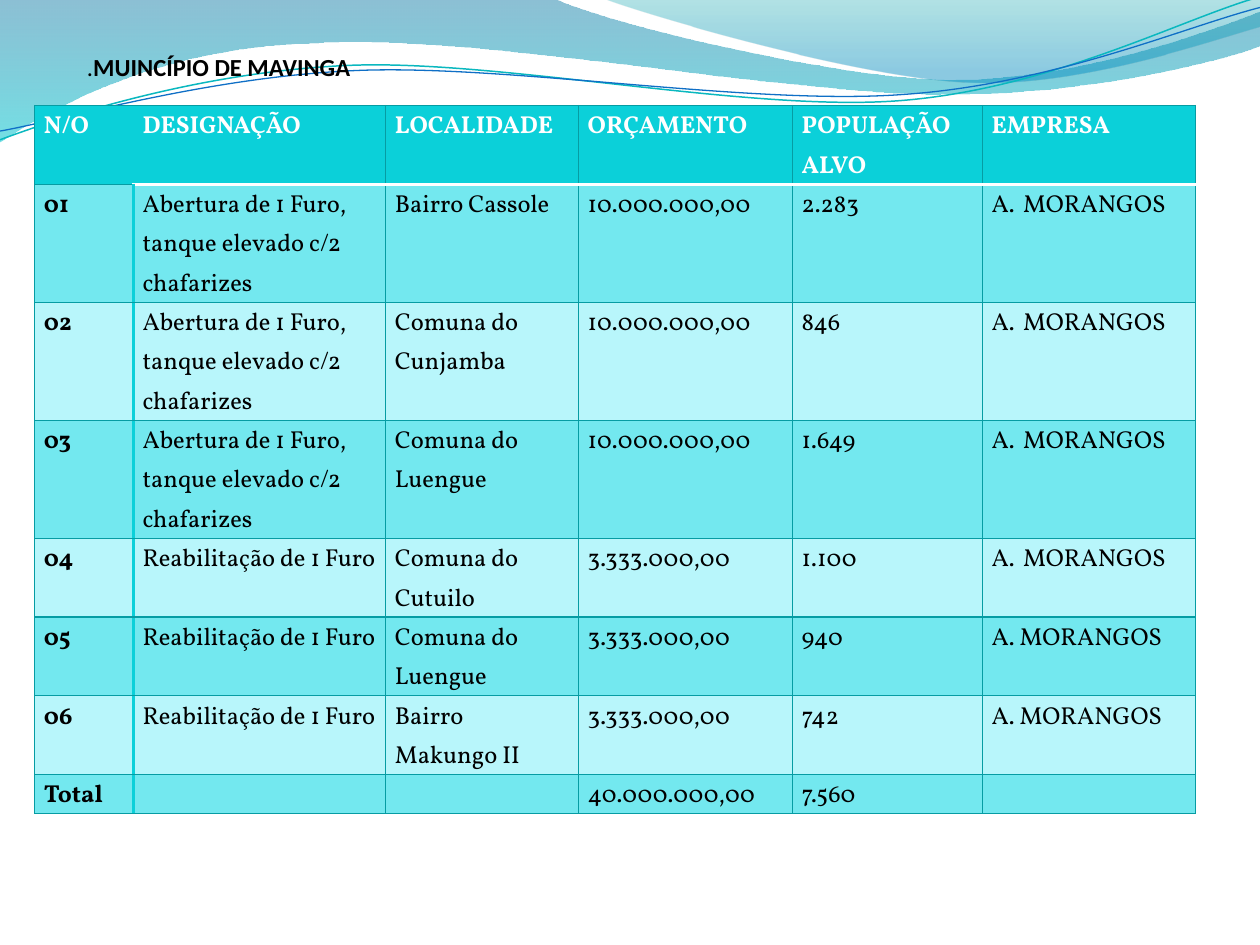
import math
import pptx
import pptx.util
import pptx.dml.color
import pptx.enum.text
import pptx.oxml.ns
import lxml.etree

Pt = pptx.util.Pt
RGB = pptx.dml.color.RGBColor
qn = pptx.oxml.ns.qn
WHITE = RGB(0xFF, 0xFF, 0xFF)
BLACK = RGB(0, 0, 0)
HEAD = RGB(0x0B, 0xD0, 0xD9)
DARK = RGB(0x73, 0xE8, 0xEF)
LIGHT = RGB(0xB8, 0xF6, 0xFB)
EDGE = RGB(0x06, 0x9C, 0xA3)
TEAL = RGB(0x0A, 0xB8, 0xBF)
BLUE = RGB(0x0F, 0x6F, 0xC6)
SKY = RGB(0x00, 0x74, 0xA1)
AQUA = RGB(0x00, 0xC6, 0xCF)
SEA = RGB(0x00, 0xA1, 0xA9)
LAKE = RGB(0x00, 0x8B, 0xBF)


def draw(parts, close):
    dots = [(Pt(part[i]), Pt(part[i + 1])) for part in parts for i in range(0, len(part), 2)]
    pen = slide.shapes.build_freeform(*dots[0], scale=1.0)
    pen.add_line_segments(dots[1:], close=close)
    shape = pen.convert_to_shape()
    shape.shadow.inherit = False
    steps = iter(shape._element.findall(".//" + qn("a:lnTo")))
    for part in parts[1:]:
        step = next(steps)
        if len(part) == 6:
            step.addprevious(curve := lxml.etree.Element(qn("a:cubicBezTo")))
            for old in (step, next(steps), next(steps)):
                curve.append(old[0])
                old.getparent().remove(old)
    return shape


def edge(cell, side, color, width):
    line = lxml.etree.Element(qn("a:ln" + side), w=str(Pt(width)))
    if color is None:
        lxml.etree.SubElement(line, qn("a:noFill"))
    else:
        fill = lxml.etree.SubElement(line, qn("a:solidFill"))
        lxml.etree.SubElement(fill, qn("a:srgbClr"), val=str(color))
    cell._tc.get_or_add_tcPr().insert("LRTB".index(side), line)


deck = pptx.Presentation()
deck.slide_width, deck.slide_height = Pt(720), Pt(540)
slide = deck.slides.add_slide(deck.slide_layouts[5])

waves = [
    ([(0, 0), (316.8, -0.7), (342.7, 12.2, 478.1, 45.4, 545.8, 45.4),
      (614.2, 45.4, 689.8, 18.7, 720, 6.5), (720.7, 25.9),
      (707.8, 31.7, 626.4, 54.7, 537.1, 54),
      (447.8, 54, 275, 20.2, 185, 24.5),
      (92.9, 25.9, 33.1, 59.8, -0.7, 81.4)],
     [(SKY, 0, 45), (AQUA, 100, 55)]),
    ([(344.9, -0.7), (366.5, 7.9, 491, 44.6, 553.7, 46.8),
      (616.3, 49.7, 691.9, 23, 720, 15.1), (720, 0)],
     [(SEA, 0, 30), (LAKE, 80, 45)]),
]
for parts, stops in waves:
    wave = draw(parts, True)
    wave.line.fill.background()
    wave.fill.gradient()
    wave.fill.gradient_angle = 270
    for stop, (color, place, alpha) in zip(wave.fill.gradient_stops, stops):
        stop.color.rgb = color
        stop._gs.set("pos", str(place * 1000))
        lxml.etree.SubElement(stop._gs[0], qn("a:alpha"), val=str(alpha * 1000))

lines = [
    ([(0, 79.9), (34.6, 67, 113.8, 41, 199.4, 37.4),
      (284.4, 33.8, 427, 64.1, 513.4, 57.6),
      (599.8, 51.1, 675.4, 10.8, 718.6, -1.4)], 41.4, TEAL, 0.85),
    ([(0, 74.9), (33.8, 69.1, 118.1, 43.9, 203.8, 40.3),
      (290.2, 36.7, 429.8, 60.5, 516.2, 54),
      (601.9, 48.2, 677.5, 15.1, 720, 4.3)], 42.5, BLUE, 0.75),
]
tilt = -2.7
cos, sin = math.cos(math.radians(tilt)), math.sin(math.radians(tilt))
for parts, mid, color, width in lines:
    flat = []
    for part in parts:
        pairs = [(x - 359.6, y - mid) for x, y in zip(part[::2], part[1::2])]
        flat.append([n for x, y in pairs
                     for n in (359.6 + x * cos + y * sin, mid + y * cos - x * sin)])
    line = draw(flat, False)
    line.rotation = tilt
    line.fill.background()
    line.line.color.rgb = color
    line.line.width = Pt(width)

well = "Abertura de 1 Furo, tanque elevado c/2 chafarizes"
fix = "Reabilitação de 1 Furo"
firm = "MORANGOS"
rows = [
    ("N/O", "DESIGNAÇÃO", "LOCALIDADE", "ORÇAMENTO", "POPULAÇÃO ALVO", "EMPRESA"),
    ("01", well, "Bairro Cassole", "10.000.000,00", "2.283", firm),
    ("02", well, "Comuna do Cunjamba", "10.000.000,00", "846", firm),
    ("03", well, "Comuna do Luengue", "10.000.000,00", "1.649", firm),
    ("04", fix, "Comuna do Cutuilo", "3.333.000,00", "1.100", firm),
    ("05", fix, "Comuna do Luengue", "3.333.000,00", "940", "A. " + firm),
    ("06", fix, "Bairro Makungo II", "3.333.000,00", "742", "A. " + firm),
    ("Total", "", "", "40.000.000,00", "7.560", ""),
]
widths = [56.4, 144.2, 110.2, 122.3, 108.5, 121.7]
heights = [40.3, 61.2, 61.2, 61.2, 40.3, 43.2, 40.3, 21.6]
frame = slide.shapes.add_table(len(rows), len(widths), Pt(19.9), Pt(60.2),
                               Pt(sum(widths)), Pt(sum(heights)))
table = frame.table
table.horz_banding = False
for col, width in zip(table.columns, widths):
    col.width = Pt(width)
for r, row in enumerate(rows):
    table.rows[r].height = Pt(heights[r])
    for c, text in enumerate(row):
        cell = table.cell(r, c)
        cell.margin_left = cell.margin_right = Pt(5.2)
        cell.margin_top = cell.margin_bottom = 0
        cell.fill.solid()
        cell.fill.fore_color.rgb = HEAD if r == 0 else DARK if r % 2 else LIGHT
        thin = (EDGE, 0.75)
        split = (HEAD, 2) if r else (None, 0)
        under = (WHITE, 2) if c else thin
        edge(cell, "L", *(split if c == 1 else thin))
        edge(cell, "R", *(split if c == 0 else thin))
        edge(cell, "T", *(under if r == 1 else thin))
        edge(cell, "B", *(under if r == 0 else thin))
        if not text:
            continue
        cell.text_frame.text = text
        para = cell.text_frame.paragraphs[0]
        para.line_spacing = 1.15
        if text == firm:
            props = para._p.get_or_add_pPr()
            props.set("marL", str(Pt(18)))
            props.set("indent", str(-Pt(18)))
            lxml.etree.SubElement(props, qn("a:buFont"), typeface="+mj-lt")
            lxml.etree.SubElement(props, qn("a:buAutoNum"), type="alphaUcPeriod")
        font = para.runs[0].font
        font.name, font.size = "Vollkorn", Pt(14)
        font.bold = r == 0 or c == 0
        font.color.rgb = BLACK if r else WHITE

title = slide.shapes.title
title.left, title.top, title.width, title.height = Pt(42.5), Pt(26), Pt(538.5), Pt(46)
slide.shapes._spTree.append(title._element)
body = title.text_frame
body.text = "."
body.word_wrap = True
body.auto_size = pptx.enum.text.MSO_AUTO_SIZE.NONE
body.vertical_anchor = pptx.enum.text.MSO_ANCHOR.TOP
para = body.paragraphs[0]
para.alignment = pptx.enum.text.PP_ALIGN.LEFT
para.add_run().text = "MUINCÍPIO DE MAVINGA"
for run, bold in zip(para.runs, (False, True)):
    run.font.name, run.font.size, run.font.bold = "Calibri", Pt(14), bold
    run.font.color.rgb = BLACK

deck.save("out.pptx")
